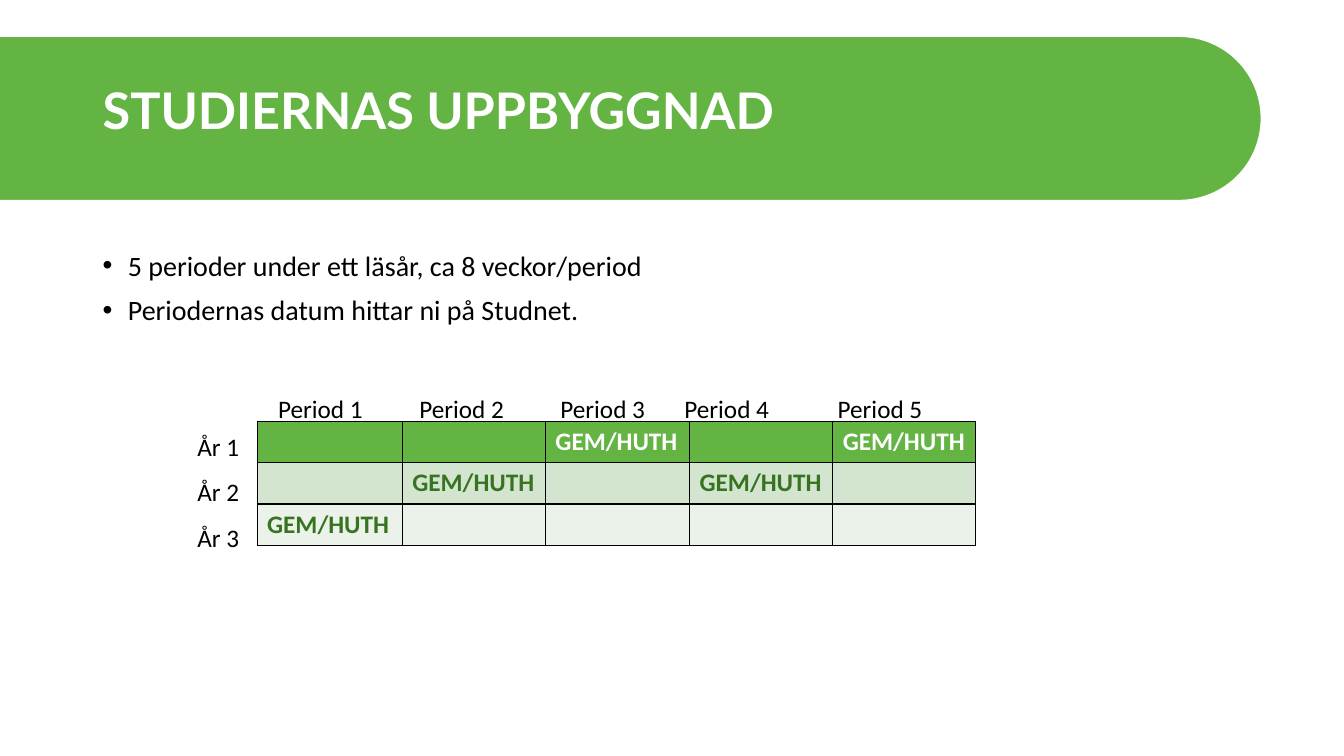
import pptx
import pptx.util
import pptx.dml.color
import pptx.enum.shapes
import pptx.enum.text
import pptx.oxml

Inches = pptx.util.Inches
Pt = pptx.util.Pt
NS = 'xmlns:a="http://schemas.openxmlformats.org/drawingml/2006/main"'


def tint(hue):
    return pptx.dml.color.RGBColor.from_string(hue)


def write(frame, lines, face, form):
    for rank, line in enumerate(lines):
        para = frame.paragraphs[0] if rank == 0 else frame.add_paragraph()
        for key, value in form.items():
            if rank or key != "space_before":
                setattr(para, key, value)
        run = para.add_run()
        run.text = line
        for key, value in face.items():
            if key == "color":
                run.font.color.rgb = tint(value)
            else:
                setattr(run.font, key, value)


deck = pptx.Presentation()
deck.slide_width = Inches(13.33)
deck.slide_height = Inches(7.5)
slide = deck.slides.add_slide(deck.slide_layouts[6])

band = slide.shapes.add_shape(
    pptx.enum.shapes.MSO_SHAPE.ROUNDED_RECTANGLE,
    Inches(-1.07), Inches(0.36), Inches(13.58), Inches(1.63))
band.adjustments[0] = 0.5
band.shadow.inherit = False
band.fill.solid()
band.fill.fore_color.rgb = tint("64B444")
band.line.color.rgb = tint("FFFFFF")
band.line.width = Pt(1)

plain = {"name": "Calibri", "size": Pt(18), "color": "000000"}
texts = {
    "title": ((0.92, 0.4, 11.5, 1.45), ["STUDIERNAS UPPBYGGNAD"],
              {"name": "Lato", "size": Pt(36), "color": "FFFFFF", "bold": True},
              {"line_spacing": 0.9}),
    "body": ((0.92, 2.45, 11.5, 1.2),
             ["5 perioder under ett läsår, ca 8 veckor/period",
              "Periodernas datum hittar ni på Studnet."],
             {**plain, "size": Pt(20)},
             {"line_spacing": 0.9, "space_before": Pt(10)}),
    "terms": ((2.66, 3.85, 7.01, 0.4),
              ["\t".join(f"Period {n}" for n in range(1, 6))], plain, {}),
    "years": ((1.86, 4.08, 0.7, 1.46),
              [f"År {n}" for n in range(1, 4)], plain, {"line_spacing": 1.5}),
}
frames = {}
for name, (place, lines, face, form) in texts.items():
    frame = slide.shapes.add_textbox(*map(Inches, place)).text_frame
    frame.word_wrap = True
    write(frame, lines, face, form)
    frames[name] = frame
frames["title"].vertical_anchor = pptx.enum.text.MSO_ANCHOR.MIDDLE

for para in frames["body"].paragraphs:
    props = para._p.get_or_add_pPr()
    props.set("marL", str(Inches(0.25)))
    props.set("indent", str(Inches(-0.25)))
    props.append(pptx.oxml.parse_xml(f'<a:buFont {NS} typeface="Arial"/>'))
    props.append(pptx.oxml.parse_xml(f'<a:buChar {NS} char="•"/>'))

stops = "".join(f'<a:tab pos="{Inches(stop)}" algn="l"/>'
                for stop in (1.4, 2.8, 4.03, 5.55))
props = frames["terms"].paragraphs[0]._p.get_or_add_pPr()
props.append(pptx.oxml.parse_xml(f"<a:tabLst {NS}>{stops}</a:tabLst>"))

rows = [("64B444", "FFFFFF", (2, 4)),
        ("D3E5CF", "387321", (1, 3)),
        ("EAF2E9", "387321", (0,))]
widths = (1.44, 1.42, 1.43, 1.42, 1.42)
grid = slide.shapes.add_table(
    len(rows), len(widths), Inches(2.55), Inches(4.18),
    Inches(sum(widths)), Inches(1.22)).table
for col, width in zip(grid.columns, widths):
    col.width = Inches(width)
for r, (fill, ink, marks) in enumerate(rows):
    grid.rows[r].height = Inches(0.41)
    for c in range(len(widths)):
        cell = grid.cell(r, c)
        if c in marks:
            write(cell.text_frame, ["GEM/HUTH"],
                  {**plain, "color": ink, "bold": True}, {})
        cell.fill.solid()
        cell.fill.fore_color.rgb = tint(fill)
        props = cell._tc.get_or_add_tcPr()
        for rank, side in enumerate(("lnL", "lnR", "lnT", "lnB")):
            props.insert(rank, pptx.oxml.parse_xml(
                f'<a:{side} {NS} w="{Pt(1)}"><a:solidFill>'
                f'<a:srgbClr val="000000"/></a:solidFill></a:{side}>'))

deck.save("out.pptx")
